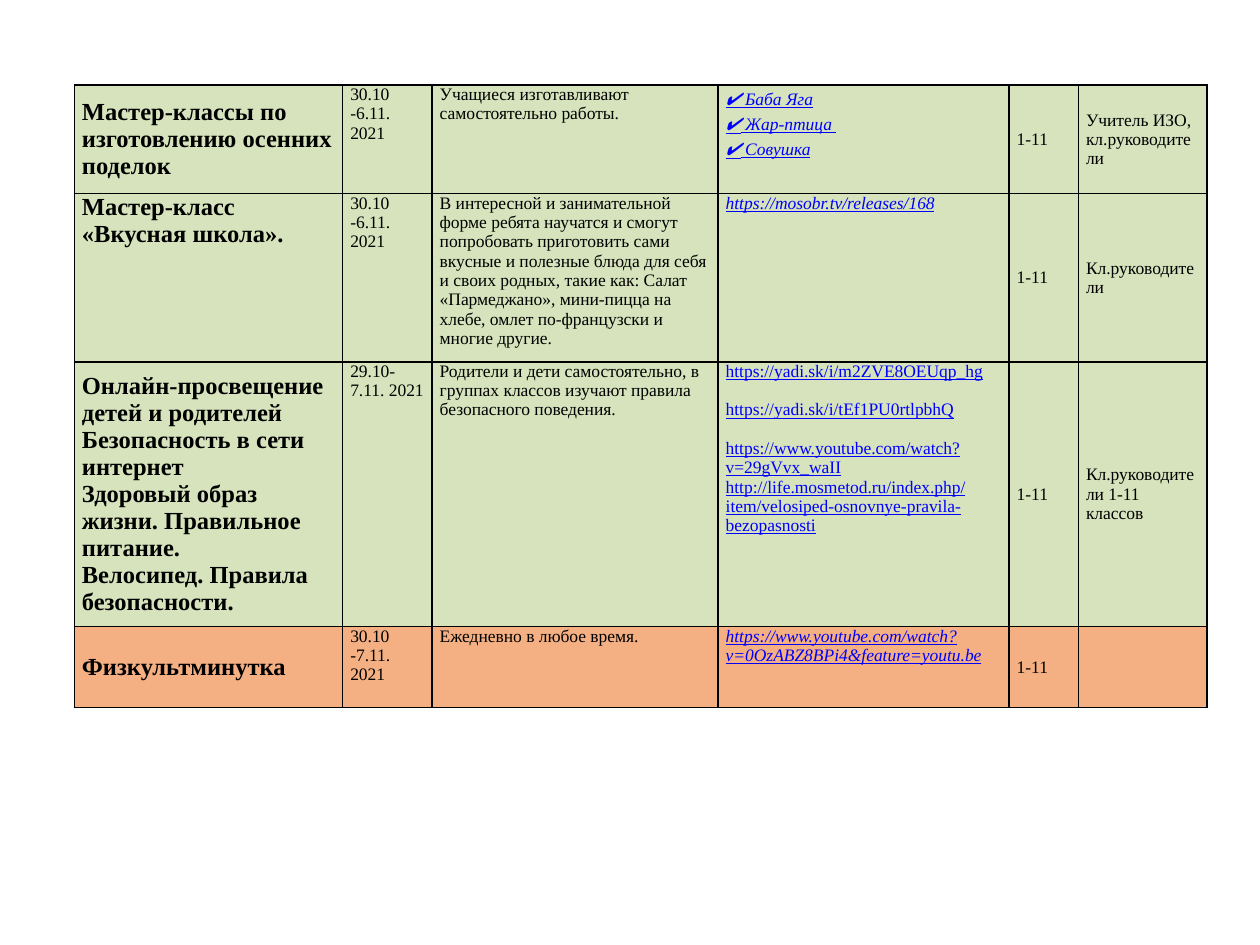
from dataclasses import dataclass

import pptx
import pptx.dml.color
import pptx.enum.text
import pptx.oxml
import pptx.oxml.ns
import pptx.util
from lxml import etree

MIDDLE = pptx.enum.text.MSO_ANCHOR.MIDDLE
TOP = pptx.enum.text.MSO_ANCHOR.TOP


@dataclass(frozen=True)
class Theme:
    font: str = "Times New Roman"
    symbol_font: str = "Noto Sans CJK JP"
    text: str = "000000"
    link: str = "0000FF"
    green: str = "D6E3BC"
    orange: str = "F4B083"
    border: str = "000000"
    heading_size: float = 14
    body_size: float = 10
    link_gap: float = 11
    border_width: float = 1
    side_margin: float = 0.06


@dataclass(frozen=True)
class Style:
    size: float
    color: str
    bold: bool = False
    italic: bool = False
    underline: bool = False


@dataclass(frozen=True)
class Activity:
    title: list[str]
    dates: list[str]
    description: str
    links: list[str]
    staff: str
    fill: str
    classes: str = "1-11"
    title_anchor: pptx.enum.text.MSO_ANCHOR = MIDDLE
    links_italic: bool = True
    gaps_before: tuple[int, ...] = ()


THEME = Theme()
HEADING = Style(THEME.heading_size, THEME.text, bold=True)
BODY = Style(THEME.body_size, THEME.text)
LINK = Style(THEME.body_size, THEME.link, underline=True)
ITALIC_LINK = Style(THEME.body_size, THEME.link, italic=True, underline=True)
CHECK = "✔"

# Grid as shares of the slide's width and height
TABLE_LEFT, TABLE_TOP = 0.059, 0.09
COLUMNS = (0.213, 0.071, 0.227, 0.231, 0.055, 0.102)
ROWS = (0.115, 0.178, 0.28, 0.086)

ACTIVITIES = [
    Activity(
        title=["Мастер-классы по изготовлению осенних поделок"],
        dates=["30.10 -6.11.", "2021"],
        description="Учащиеся изготавливают самостоятельно работы.",
        links=["✔ Баба Яга", "✔ Жар-птица ", "✔ Совушка"],
        staff="Учитель ИЗО, кл.руководители",
        fill=THEME.green,
    ),
    Activity(
        title=["Мастер-класс «Вкусная школа»."],
        dates=["30.10 -6.11.", "2021"],
        description="В интересной и занимательной форме ребята научатся и смогут "
        "попробовать приготовить сами вкусные и полезные блюда для себя и своих "
        "родных, такие как: Салат «Пармеджано», мини-пицца на хлебе, омлет "
        "по-французски и многие другие.",
        links=["https://mosobr.tv/releases/168"],
        staff="Кл.руководители",
        fill=THEME.green,
        title_anchor=TOP,
    ),
    Activity(
        title=[
            "Онлайн-просвещение детей и родителей",
            "Безопасность в сети интернет",
            "Здоровый образ жизни. Правильное питание.",
            "Велосипед. Правила безопасности.",
        ],
        dates=["29.10-7.11. 2021"],
        description="Родители и дети самостоятельно, в группах классов изучают "
        "правила безопасного поведения.",
        links=[
            "https://yadi.sk/i/m2ZVE8OEUqp_hg",
            "https://yadi.sk/i/tEf1PU0rtlpbhQ",
            "https://www.youtube.com/watch?v=29gVvx_waII",
            "http://life.mosmetod.ru/index.php/item/velosiped-osnovnye-pravila-bezopasnosti",
        ],
        staff="Кл.руководители 1-11 классов",
        fill=THEME.green,
        links_italic=False,
        gaps_before=(1, 2),
    ),
    Activity(
        title=["Физкультминутка"],
        dates=["30.10 -7.11.", "2021"],
        description="Ежедневно в любое время.",
        links=["https://www.youtube.com/watch?v=0OzABZ8BPi4&feature=youtu.be"],
        staff="",
        fill=THEME.orange,
    ),
]


def add_run(paragraph, text: str, style: Style, font_name: str = THEME.font) -> None:
    run = paragraph.add_run()
    run.text = text
    font = run.font
    font.name, font.size = font_name, pptx.util.Pt(style.size)
    font.bold, font.italic, font.underline = style.bold, style.italic, style.underline
    font.color.rgb = pptx.dml.color.RGBColor.from_string(style.color)
    east_asian = etree.SubElement(font._element, pptx.oxml.ns.qn("a:ea"))
    east_asian.set("typeface", font_name)


def add_borders(cell) -> None:
    """Insert the four borders ahead of the cell's fill, as the schema asks."""
    properties = cell._tc.get_or_add_tcPr()
    width = pptx.util.Pt(THEME.border_width)
    for position, side in enumerate(("lnL", "lnR", "lnT", "lnB")):
        line = pptx.oxml.parse_xml(
            f'<a:{side} {pptx.oxml.ns.nsdecls("a")} w="{width}"><a:solidFill>'
            f'<a:srgbClr val="{THEME.border}"/></a:solidFill></a:{side}>'
        )
        properties.insert(position, line)


def fill_cell(cell, lines: list[str], style: Style, anchor, fill: str,
              gaps_before: tuple[int, ...] = ()) -> None:
    cell.margin_left = cell.margin_right = pptx.util.Inches(THEME.side_margin)
    cell.margin_top = cell.margin_bottom = 0
    cell.vertical_anchor = anchor
    cell.fill.solid()
    cell.fill.fore_color.rgb = pptx.dml.color.RGBColor.from_string(fill)
    add_borders(cell)
    frame = cell.text_frame
    for index, text in enumerate(lines):
        paragraph = frame.add_paragraph() if index else frame.paragraphs[0]
        if index in gaps_before:
            paragraph.space_before = pptx.util.Pt(THEME.link_gap)
        if text.startswith(CHECK):
            add_run(paragraph, CHECK, style, THEME.symbol_font)
            text = text.removeprefix(CHECK)
        if text:
            add_run(paragraph, text, style)


def fill_row(table, row: int, activity: Activity) -> None:
    link_style = ITALIC_LINK if activity.links_italic else LINK
    contents = [
        (activity.title, HEADING, activity.title_anchor),
        (activity.dates, BODY, TOP),
        ([activity.description], BODY, TOP),
        (activity.links, link_style, TOP),
        ([activity.classes], BODY, MIDDLE),
        ([activity.staff], BODY, MIDDLE),
    ]
    for column, (lines, style, anchor) in enumerate(contents):
        gaps = activity.gaps_before if lines is activity.links else ()
        fill_cell(table.cell(row, column), lines, style, anchor, activity.fill, gaps)


def main() -> None:
    presentation = pptx.Presentation()
    width = presentation.slide_width = pptx.util.Inches(10)
    height = presentation.slide_height = pptx.util.Inches(7.5)
    slide = presentation.slides.add_slide(presentation.slide_layouts[6])

    # Schedule of activities
    table = slide.shapes.add_table(
        len(ROWS), len(COLUMNS), int(width * TABLE_LEFT), int(height * TABLE_TOP),
        int(width * sum(COLUMNS)), int(height * sum(ROWS)),
    ).table
    table.first_row = table.horz_banding = False
    for column, share in zip(table.columns, COLUMNS):
        column.width = int(width * share)
    for row, share in zip(table.rows, ROWS):
        row.height = int(height * share)
    for index, activity in enumerate(ACTIVITIES):
        fill_row(table, index, activity)

    presentation.save("out.pptx")


if __name__ == "__main__":
    main()
